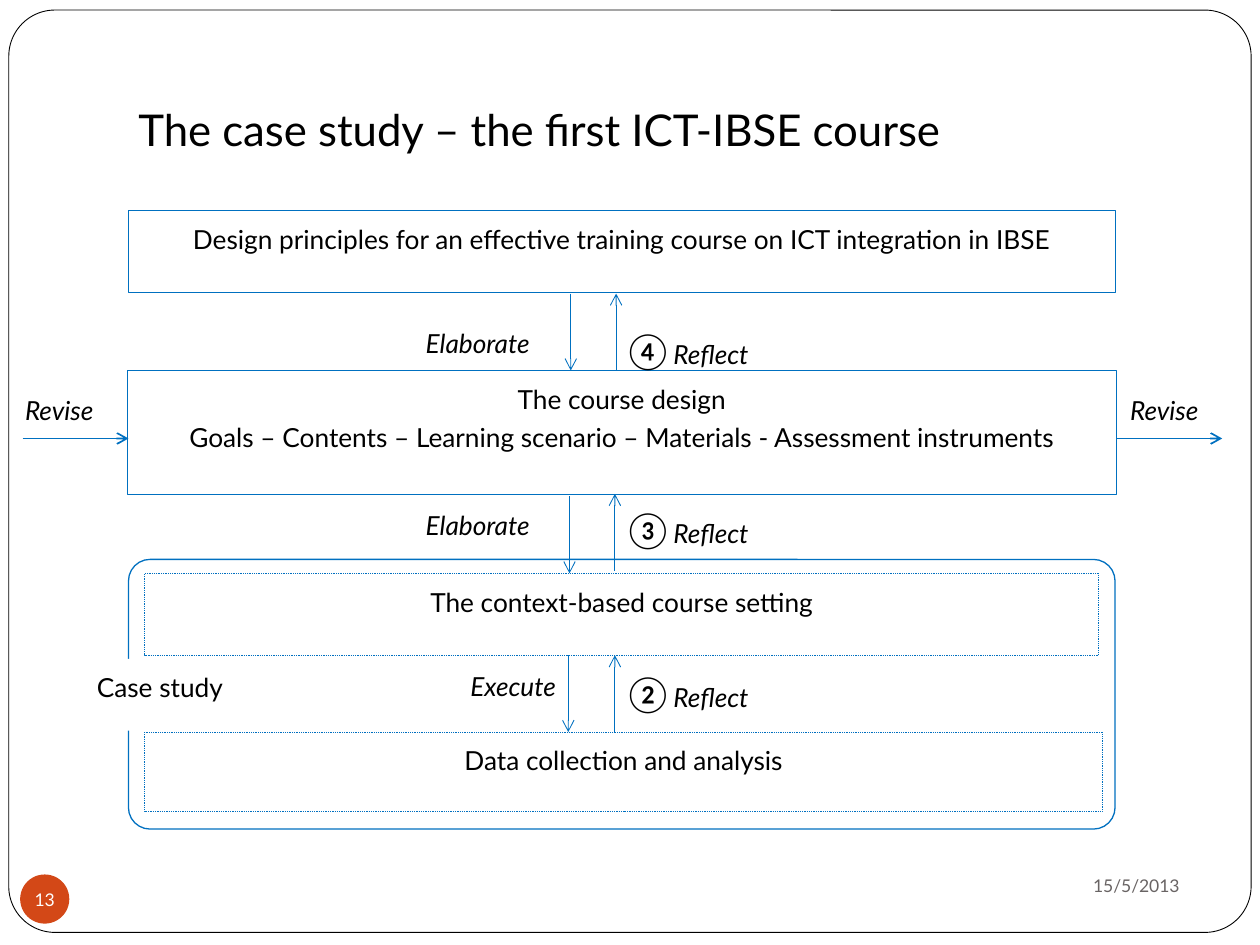
from dataclasses import dataclass

from lxml import etree
from pptx import Presentation
from pptx.dml.color import RGBColor
from pptx.enum.dml import MSO_LINE
from pptx.enum.shapes import MSO_CONNECTOR, MSO_SHAPE
from pptx.enum.text import MSO_ANCHOR, PP_ALIGN
from pptx.oxml.ns import qn
from pptx.util import Inches, Pt

ROUNDED, RECTANGLE, OVAL = MSO_SHAPE.ROUNDED_RECTANGLE, MSO_SHAPE.RECTANGLE, MSO_SHAPE.OVAL
STRAIGHT = MSO_CONNECTOR.STRAIGHT
DOTTED = MSO_LINE.ROUND_DOT
TOP, MIDDLE, BOTTOM = MSO_ANCHOR.TOP, MSO_ANCHOR.MIDDLE, MSO_ANCHOR.BOTTOM
LEFT, CENTER, RIGHT, JUSTIFY = PP_ALIGN.LEFT, PP_ALIGN.CENTER, PP_ALIGN.RIGHT, PP_ALIGN.JUSTIFY

FONT = "Lato"
COLORS = {
    "black": "000000",
    "white": "FFFFFF",
    "blue": "0070C0",
    "orange": "D34817",
    "gray": "696464",
}
Bounds = tuple[float, float, float, float]


@dataclass
class Stage:
    bounds: Bounds
    lines: tuple[str, ...]
    line_width: float = 0.5
    dotted: bool = False


@dataclass
class Label:
    bounds: Bounds
    text: str
    number: str = ""
    align: PP_ALIGN = JUSTIFY


@dataclass
class Arrow:
    start: tuple[float, float]
    end: tuple[float, float]
    width: float = 0.5


STAGES = [
    Stage((1.02, 1.67, 7.83, 0.65),
          ("Design principles for an effective training course on ICT integration in IBSE",)),
    Stage((1.01, 2.94, 7.85, 0.98),
          ("The course design",
           "Goals – Contents – Learning scenario – Materials - Assessment instruments"), 0.25),
    Stage((1.15, 4.55, 7.57, 0.65), ("The context-based course setting",), dotted=True),
    Stage((1.15, 5.81, 7.6, 0.63), ("Data collection and analysis",), dotted=True),
]
LABELS = [
    Label((3.28, 2.5, 1.25, 0.53), "Elaborate"),
    Label((4.89, 2.5, 1.89, 0.55), "Reflect", "④"),
    Label((3.28, 3.94, 1.24, 0.62), "Elaborate"),
    Label((4.89, 3.92, 1.62, 0.64), "Reflect", "③"),
    Label((3.42, 5.22, 1.09, 0.59), "Execute", align=RIGHT),
    Label((4.89, 5.22, 1.81, 0.59), "Reflect", "②"),
    Label((0.1, 3.03, 1.05, 0.54), "Revise"),
    Label((8.87, 3.03, 1.05, 0.54), "Revise"),
]
ARROWS = [
    Arrow((4.53, 2.33), (4.53, 2.94)),
    Arrow((4.89, 2.94), (4.89, 2.33)),
    Arrow((4.52, 3.94), (4.52, 4.55)),
    Arrow((4.88, 4.53), (4.88, 3.92)),
    Arrow((4.51, 5.2), (4.51, 5.81)),
    Arrow((4.88, 5.81), (4.88, 5.2)),
    Arrow((0.18, 3.48), (1.02, 3.48), 1),
    Arrow((8.86, 3.48), (9.7, 3.48), 1),
]


def rgb(name: str) -> RGBColor:
    return RGBColor.from_string(COLORS[name])


def style(paragraph, size: float, color: str = "black", align=LEFT, spacing: float = 1.0) -> None:
    paragraph.alignment = align
    paragraph.line_spacing = spacing
    paragraph.font.name = FONT
    paragraph.font.size = Pt(size)
    paragraph.font.color.rgb = rgb(color)


def write(shape, lines: tuple[str, ...], size: float, color: str = "black", align=LEFT,
          spacing: float = 1.0, anchor=TOP) -> None:
    frame = shape.text_frame
    frame.word_wrap = True
    frame.vertical_anchor = anchor
    frame.text = "\n".join(lines)
    for paragraph in frame.paragraphs:
        style(paragraph, size, color, align, spacing)


def add_box(slide, kind, bounds: Bounds, fill: str = "", line: str = "", width: float = 0.5):
    shape = slide.shapes.add_shape(kind, *map(Inches, bounds))
    shape.shadow.inherit = False
    if fill:
        shape.fill.solid()
        shape.fill.fore_color.rgb = rgb(fill)
    else:
        shape.fill.background()
    if line:
        shape.line.color.rgb = rgb(line)
        shape.line.width = Pt(width)
    else:
        shape.line.fill.background()
    return shape


def add_text(slide, bounds: Bounds, text: str, size: float, color: str = "black",
             align=LEFT, anchor=TOP):
    box = slide.shapes.add_textbox(*map(Inches, bounds))
    write(box, (text,), size, color, align, anchor=anchor)
    return box


def add_stage(slide, stage: Stage) -> None:
    shape = add_box(slide, RECTANGLE, stage.bounds, "white", "blue", stage.line_width)
    if stage.dotted:
        shape.line.dash_style = DOTTED
    write(shape, stage.lines, 15, align=CENTER, spacing=1.2)


def add_label(slide, label: Label) -> None:
    frame = slide.shapes.add_textbox(*map(Inches, label.bounds)).text_frame
    frame.word_wrap = True
    paragraph = frame.paragraphs[0]
    style(paragraph, 15, align=label.align, spacing=1.2)
    if label.number:
        number = paragraph.add_run()
        number.text = label.number
        number.font.size = Pt(20)
    word = paragraph.add_run()
    word.text = f" {label.text}" if label.number else label.text
    word.font.italic = True


def add_arrow(slide, arrow: Arrow) -> None:
    connector = slide.shapes.add_connector(STRAIGHT, *map(Inches, arrow.start + arrow.end))
    connector.line.color.rgb = rgb("blue")
    connector.line.width = Pt(arrow.width)
    etree.SubElement(connector.line._get_or_add_ln(), qn("a:tailEnd"), type="arrow")
    etree.SubElement(connector._element.spPr, qn("a:effectLst"))


def main() -> None:
    """Build the slide showing the stages of the ICT-IBSE case study."""
    presentation = Presentation()
    presentation.slide_width, presentation.slide_height = Inches(10), Inches(7.5)
    slide = presentation.slides.add_slide(presentation.slide_layouts[6])

    page_frame = add_box(slide, ROUNDED, (0.07, 0.08, 9.86, 7.32), "white", "black")
    page_frame.adjustments[0] = 0.05
    title = add_text(slide, (1, 0.08, 8.5, 1.25),
                     "The case study – the first ICT-IBSE course", 25, anchor=BOTTOM)
    title.text_frame.margin_bottom = Inches(0.1)
    add_text(slide, (6.75, 6.77, 2.71, 0.52), "15/5/2013", 10, "gray", RIGHT, MIDDLE)

    page_number = add_box(slide, OVAL, (0.16, 6.94, 0.39, 0.39), "orange")
    write(page_number, ("13",), 10, "white", CENTER, anchor=MIDDLE)
    frame = page_number.text_frame
    frame.word_wrap = False
    frame.margin_left = frame.margin_right = frame.margin_top = frame.margin_bottom = 0

    case_frame = add_box(slide, ROUNDED, (1.02, 4.44, 7.83, 2.14), line="blue", width=0.75)
    case_frame.adjustments[0] = 0.08
    for stage in STAGES:
        add_stage(slide, stage)
    case_label = add_box(slide, RECTANGLE, (0.67, 5.23, 1.59, 0.57), "white")
    write(case_label, ("Case study",), 15, align=JUSTIFY, spacing=1.2)
    for label in LABELS:
        add_label(slide, label)
    for arrow in ARROWS:
        add_arrow(slide, arrow)

    presentation.save("out.pptx")


if __name__ == "__main__":
    main()
